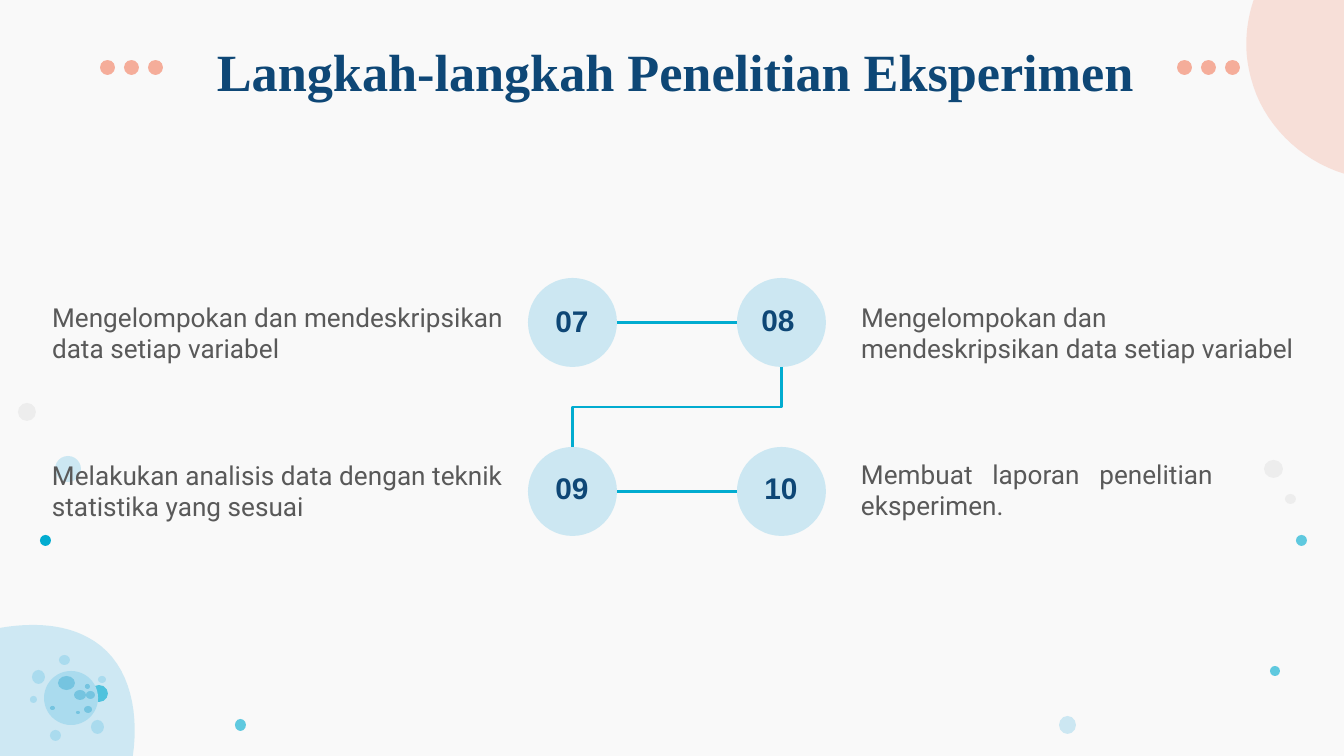
"""Build the slide on steps 07 to 10 of experimental research."""
from lxml import etree
from pptx import Presentation
from pptx.dml.color import RGBColor
from pptx.enum import shapes, text
from pptx.oxml import ns
from pptx.util import Emu, Pt

PX = 914400 / 134.4
WIDTH, HEIGHT = 1344, 756

PAPER = RGBColor(0xF9, 0xF9, 0xF9)
NAVY = RGBColor(0x0E, 0x47, 0x76)
GREY = RGBColor(0x59, 0x59, 0x59)
TEAL = RGBColor(0x02, 0xAC, 0xD0)
SKY = RGBColor(0xAA, 0xDB, 0xEE)
POOL = RGBColor(0x75, 0xC4, 0xE0)
MIST = RGBColor(0xED, 0xED, 0xED)
PEACH = RGBColor(0xF5, 0xAD, 0x9A)

TITLE = "Langkah-langkah Penelitian Eksperimen"
LEFT, JUSTIFY, CENTER = text.PP_ALIGN.LEFT, text.PP_ALIGN.JUSTIFY, text.PP_ALIGN.CENTER
NODE = 89
COLUMNS, ROWS = (528, 737), (278, 447)
STEPS = [  # number, number box corner, wording, wording box, alignment
    ("07", (525, 289), "Mengelompokan dan mendeskripsikan data setiap variabel",
     (39, 288, 495, 102), LEFT),
    ("08", (731, 288), "Mengelompokan dan mendeskripsikan data setiap variabel",
     (848, 288, 473, 95), LEFT),
    ("09", (525, 456), "Melakukan analisis data dengan teknik statistika yang sesuai",
     (39, 446, 489, 56), LEFT),
    ("10", (734, 456), "Membuat laporan penelitian eksperimen.",
     (848, 445, 378, 90), JUSTIFY),
]

BLOBS = [
    (SKY, 54, (32, 625), [
        (-27, 625, -91, 660, -146, 664), (-152, 664, -156, 664, -161, 664),
        (-188, 664, -218, 661, -246, 661), (-292, 661, -335, 669, -363, 711),
        (-421, 800, -530, 794, -530, 875), (-530, 945, -441, 965, -441, 1099),
        (-441, 1099, 81, 1099, 81, 1099), (157, 1099, 195, 1075, 198, 1032),
        (200, 995, 175, 966, 133, 960), (108, 954, 71, 942, 65, 917),
        (54, 879, 94, 853, 109, 827), (145, 763, 148, 668, 87, 637),
        (70, 628, 51, 625, 32, 625)]),
    (PEACH, 34, (1507, 86), [
        (1512, 66, 1512, 44, 1507, 23), (1500, -55, 1425, -102, 1356, -82),
        (1301, -71, 1262, -39, 1250, 13), (1245, 35, 1245, 56, 1251, 78),
        (1268, 146, 1344, 195, 1414, 175), (1461, 163, 1495, 128, 1507, 86)]),
]
BUBBLES = [
    (SKY, 57, [(55, 456, 26, 26), (1059, 716, 17, 18)]),
    (TEAL, 62, [(90, 685, 18, 17), (235, 719, 11, 12), (1270, 666, 10, 10),
                (1296, 535, 11, 11)]),
    (MIST, 100, [(1285, 494, 11, 10), (18, 403, 18, 18), (1264, 460, 19, 18)]),
    (TEAL, 100, [(40, 535, 11, 11)]),
    (SKY, 100, [(59, 655, 11, 10), (50, 730, 11, 11), (32, 670, 13, 14),
                (91, 720, 13, 14), (98, 676, 8, 7), (30, 696, 7, 7), (44, 671, 54, 54)]),
    (POOL, 100, [(86, 691, 9, 8), (85, 684, 5, 5), (74, 690, 12, 10), (58, 676, 17, 14),
                 (84, 706, 8, 7), (50, 706, 5, 4), (76, 711, 4, 3)]),
    (PEACH, 100, [(start + 24 * i, 60, 15, 15) for start in (100, 1177) for i in range(3)]),
]


def px(*lengths):
    return [Emu(round(length * PX)) for length in lengths]


def paint(shape, color, opacity):
    shape.shadow.inherit = False
    shape.line.fill.background()
    shape.fill.solid()
    shape.fill.fore_color.rgb = color
    if opacity < 100:
        tint = shape.fill._xPr.find(".//" + ns.qn("a:srgbClr"))
        etree.SubElement(tint, ns.qn("a:alpha")).set("val", str(opacity * 1000))


def add_blob(page, color, opacity, start, curves, pieces=24):
    points, here = [], start
    for curve in curves:
        knots = [here, curve[:2], curve[2:4], curve[4:]]
        for step in range(1, pieces + 1):
            t = step / pieces
            weights = ((1 - t) ** 3, 3 * t * (1 - t) ** 2, 3 * t * t * (1 - t), t ** 3)
            points.append(px(*(sum(w * knot[axis] for w, knot in zip(weights, knots))
                               for axis in (0, 1))))
        here = knots[-1]
    builder = page.shapes.build_freeform(*px(*start), scale=1.0)
    builder.add_line_segments(points, close=True)
    paint(builder.convert_to_shape(), color, opacity)


def add_oval(page, frame, color, opacity, kind=shapes.MSO_SHAPE.OVAL):
    paint(page.shapes.add_shape(kind, *px(*frame)), color, opacity)


def add_link(page, kind, *ends):
    link = page.shapes.add_connector(kind, *px(*ends))
    link.line.color.rgb = TEAL
    link.line.width = Pt(1.5)
    etree.SubElement(link._element.spPr, ns.qn("a:effectLst"))
    return link


def add_text(page, frame, words, font, size, color, bold=False, align=LEFT,
             anchor=text.MSO_ANCHOR.TOP):
    box = page.shapes.add_textbox(*px(*frame)).text_frame
    box.word_wrap = True
    box.vertical_anchor = anchor
    box.margin_left = box.margin_right = box.margin_top = box.margin_bottom = px(13)[0]
    para = box.paragraphs[0]
    para.text = words
    para.alignment = align
    para.font.name, para.font.size, para.font.bold = font, Pt(size), bold
    para.font.color.rgb = color


def add_steps(page):
    corners = [(x, y) for y in ROWS for x in COLUMNS]
    for corner in corners:
        add_oval(page, (*corner, NODE, NODE), SKY, 57,
                 shapes.MSO_SHAPE.FLOWCHART_CONNECTOR)
    for y in ROWS:
        middle = y + NODE / 2
        add_link(page, shapes.MSO_CONNECTOR.STRAIGHT,
                 COLUMNS[0] + NODE, middle, COLUMNS[1], middle)
    across, down = COLUMNS[1] - COLUMNS[0], ROWS[1] - ROWS[0] - NODE
    x, y = (sum(COLUMNS) + NODE) / 2, (sum(ROWS) + NODE) / 2
    bend = add_link(page, shapes.MSO_CONNECTOR.ELBOW,
                    x - down / 2, y - across / 2, x + down / 2, y + across / 2)
    bend._element.spPr.get_or_add_xfrm().set("rot", str(90 * 60000))
    for number, corner, words, frame, align in STEPS:
        add_text(page, frame, words, "Roboto", 14, GREY, align=align)
        add_text(page, (*corner, 94, 63), number, "Arial", 16, NAVY, True, CENTER,
                 text.MSO_ANCHOR.MIDDLE)


def main():
    deck = Presentation()
    deck.slide_width, deck.slide_height = px(WIDTH, HEIGHT)
    page = deck.slides.add_slide(deck.slide_layouts[6])
    page.background.fill.solid()
    page.background.fill.fore_color.rgb = PAPER
    for blob in BLOBS:
        add_blob(page, *blob)
    for color, opacity, frames in BUBBLES:
        for frame in frames:
            add_oval(page, frame, color, opacity)
    add_text(page, (204, 26, 1133, 70), TITLE, "Times New Roman", 28, NAVY, True)
    add_steps(page)
    deck.save("out.pptx")


if __name__ == "__main__":
    main()
